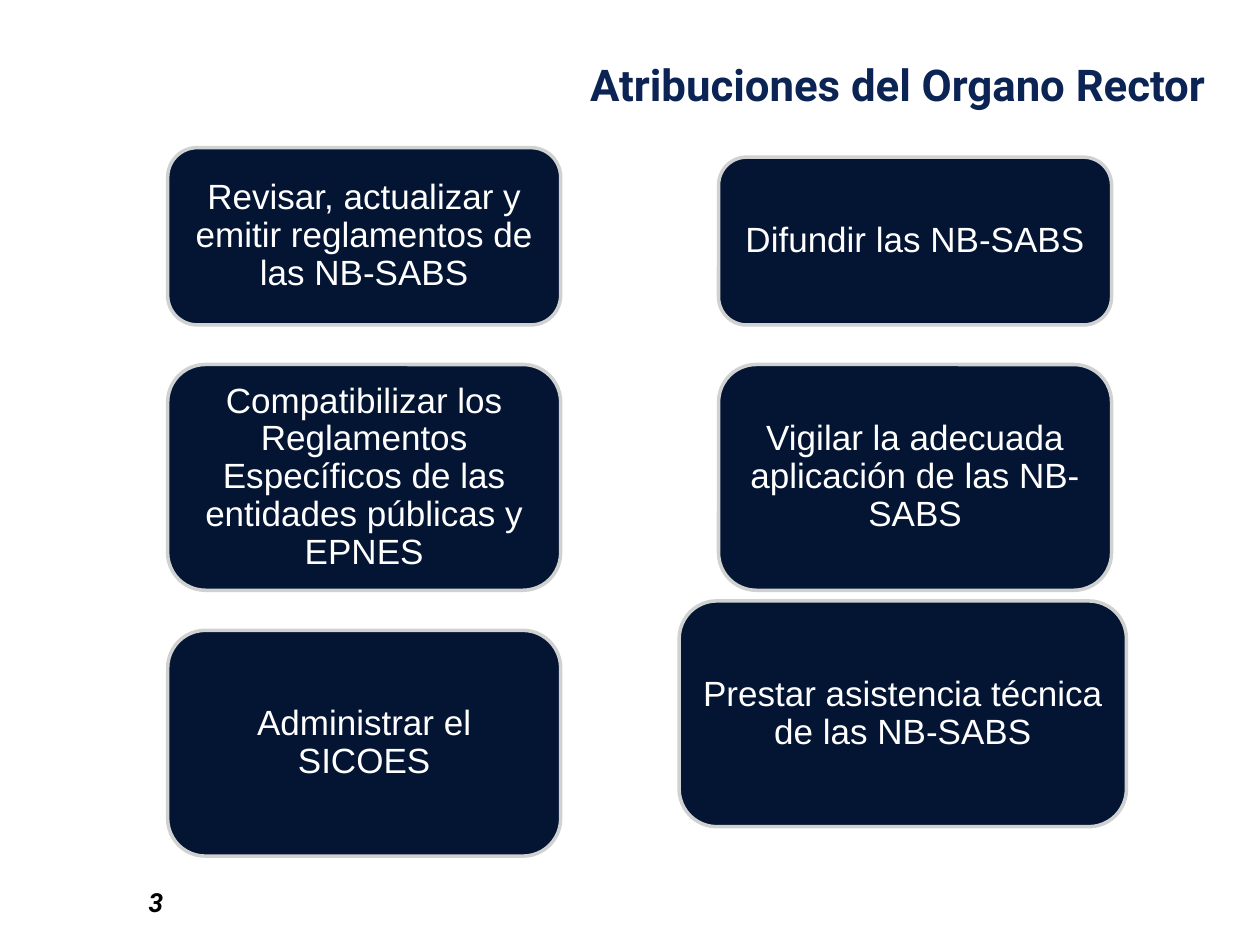
from pptx import Presentation
from pptx import util as u
from pptx.dml.color import RGBColor
from pptx.enum import shapes, text

NAVY, SILVER, WHITE = "041433", "CFD2D1", "FFFFFF"
LEFT, RIGHT, WIDTH, HEIGHT = 95.8, 410.6, 224.6, 129
MIDDLE_TOP = 208.3

DUTIES = [
    ("Revisar, actualizar y emitir reglamentos de las NB-SABS", LEFT, 84.4, WIDTH, 101.3),
    ("Prestar asistencia técnica de las NB-SABS", 388.1, 343.4, 255.6, HEIGHT),
    ("Compatibilizar los Reglamentos Específicos de las entidades públicas y EPNES",
     LEFT, MIDDLE_TOP, WIDTH, HEIGHT),
    ("Difundir las NB-SABS", RIGHT, 89.8, WIDTH, 95.9),
    ("Vigilar la adecuada aplicación de las NB-SABS", RIGHT, MIDDLE_TOP, WIDTH, HEIGHT),
    ("Administrar el SICOES", LEFT, 360.2, WIDTH, HEIGHT),
]


def color(value):
    return RGBColor.from_string(value)


def points(*values):
    return [u.Pt(value) for value in values]


def write(box, words, size, font="Arial", ink="000000", bold=False, italic=False,
          align=text.PP_ALIGN.LEFT, anchor=text.MSO_ANCHOR.MIDDLE,
          spacing=1.0, inset=None):
    frame = box.text_frame
    frame.word_wrap = True
    frame.vertical_anchor = anchor
    if inset is not None:
        frame.margin_left = frame.margin_right = u.Pt(inset)
        frame.margin_top = frame.margin_bottom = u.Pt(inset)
    para = frame.paragraphs[0]
    para.alignment = align
    para.line_spacing = spacing
    span = para.add_run()
    span.text = words
    span.font.name = font
    span.font.size = u.Pt(size)
    span.font.bold = bold
    span.font.italic = italic
    span.font.color.rgb = color(ink)


def add_label(page, words, left, top, width, height, **style):
    box = page.shapes.add_textbox(*points(left, top, width, height))
    write(box, words, **style)


def add_duty(page, words, left, top, width, height):
    box = page.shapes.add_shape(shapes.MSO_SHAPE.ROUNDED_RECTANGLE,
                                *points(left, top, width, height))
    box.shadow.inherit = False
    box.fill.solid()
    box.fill.fore_color.rgb = color(NAVY)
    box.line.color.rgb = color(SILVER)
    box.line.width = u.Pt(2)
    write(box, words, size=20, ink=WHITE, align=text.PP_ALIGN.CENTER,
          spacing=0.9, inset=6)


def main():
    deck = Presentation()
    deck.slide_width, deck.slide_height = points(720, 540)
    page = deck.slides.add_slide(deck.slide_layouts[6])
    add_label(page, "Atribuciones del Organo Rector", 221.8, 12.2, 473.8, 72,
              size=25, font="Roboto", ink="0B2453", bold=True,
              align=text.PP_ALIGN.RIGHT)
    add_label(page, "3", 77.8, 491.8, 167.8, 36, size=15, font="Roboto",
              bold=True, italic=True, anchor=text.MSO_ANCHOR.BOTTOM)
    for duty in DUTIES:
        add_duty(page, *duty)
    deck.save("out.pptx")


if __name__ == "__main__":
    main()
